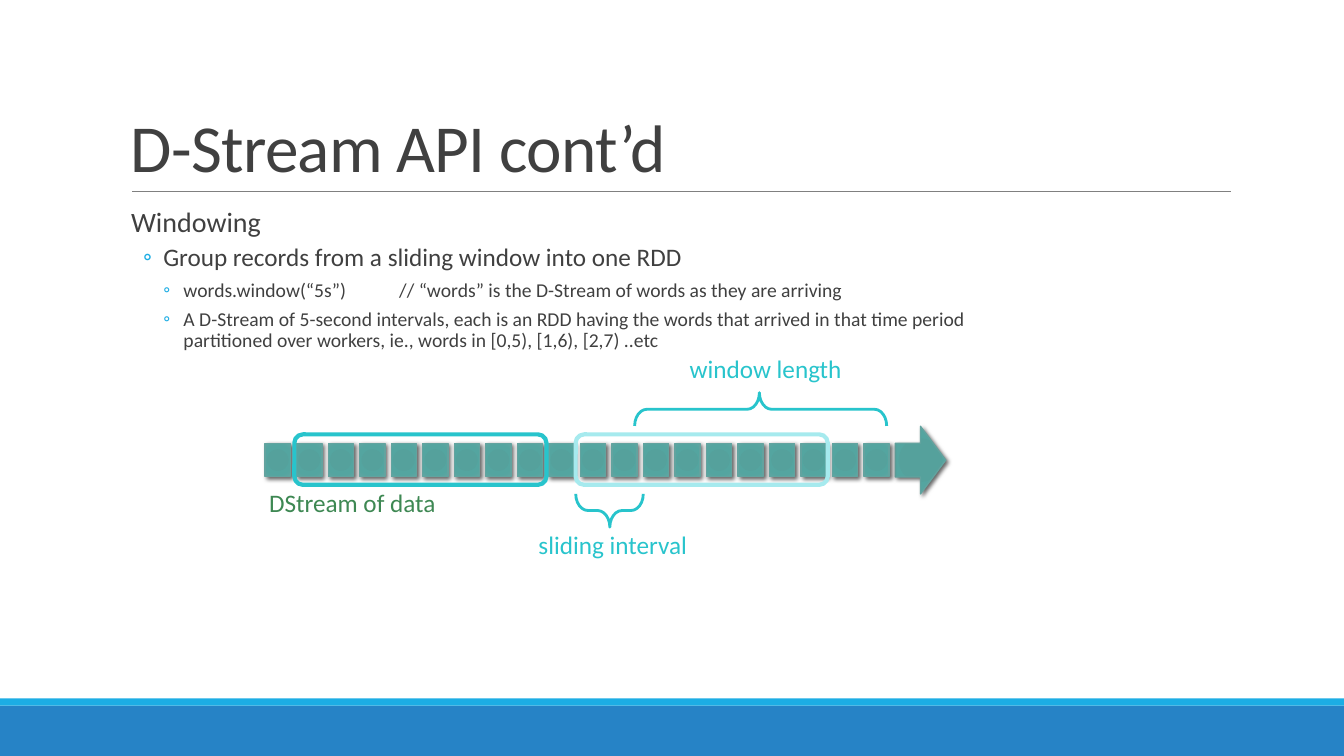
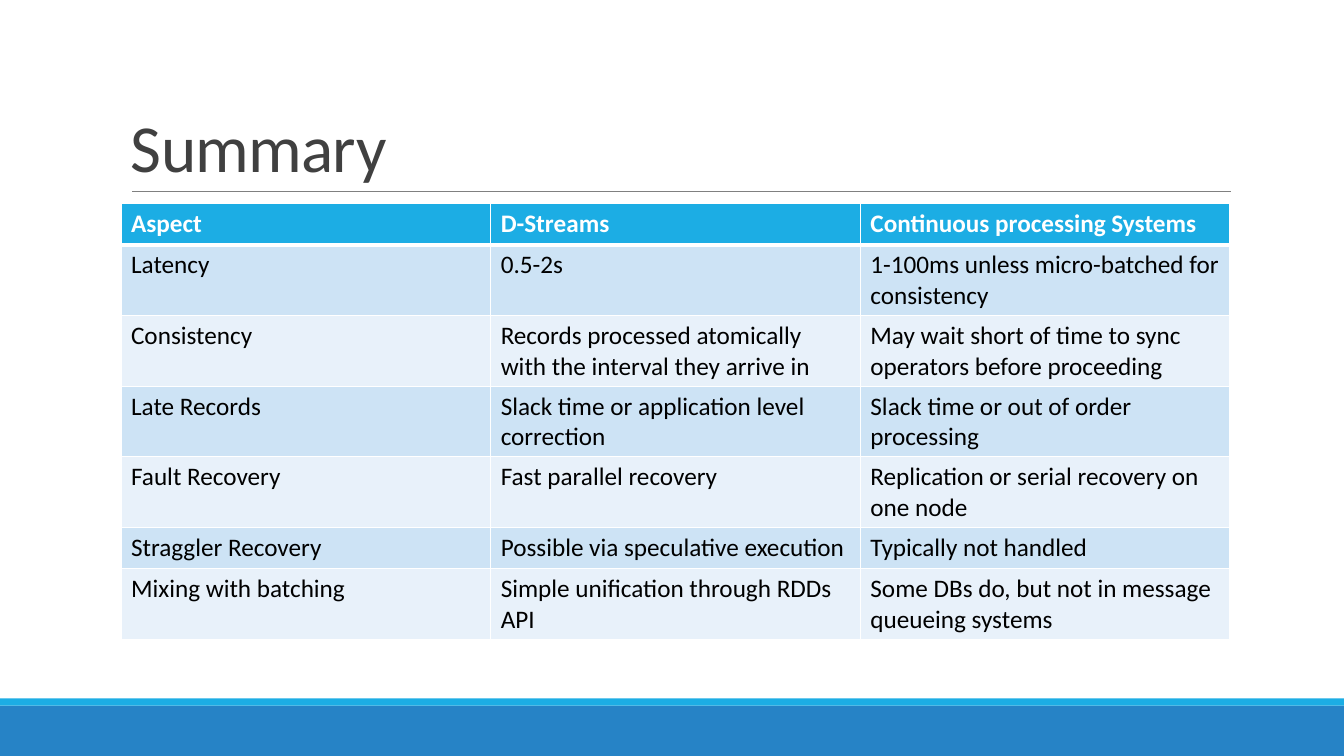
from dataclasses import dataclass
from typing import Any

from pptx import Presentation
from pptx.dml.color import RGBColor
from pptx.enum.shapes import MSO_CONNECTOR, MSO_SHAPE
from pptx.enum.text import MSO_ANCHOR
from pptx.oxml import parse_xml
from pptx.oxml.ns import nsdecls
from pptx.util import Inches, Pt

COLORS = {
    "white": "FFFFFF", "black": "000000", "text": "404040", "rule": "808080",
    "accent": "1CADE4", "band": "2683C6", "row_odd": "CDE3F5", "row_even": "E8F1FA",
    "teal": "28C4CC", "teal_light": "A6EAEE", "green": "3E8853", "block_line": "62A39F",
}
BLOCK_STOPS = ((0, "52A19C"), (34, "55A19C"), (70, "54A5A0"), (100, "5FA6A2"))
FONT = "Calibri"
SLIDE_W, SLIDE_H = 13.33, 7.5
CONTENT_X, CONTENT_Y, CONTENT_W = 1.2, 2.02, 11
STREAM_X, STREAM_Y, BLOCK_W, BLOCK_H, BLOCK_STEP, BLOCK_COUNT = 2.63, 4.4, 0.25, 0.33, 0.3126, 20


@dataclass(frozen=True)
class Box:
    x: float
    y: float
    w: float
    h: float

    def emu(self) -> tuple[int, ...]:
        return tuple(Inches(v) for v in (self.x, self.y, self.w, self.h))


@dataclass(frozen=True)
class Level:
    margin: float
    hanging: float
    size: int
    before: int
    after: int
    bullet: str = ""


@dataclass(frozen=True)
class BraceLabel:
    text: str
    label: Box
    brace: Box
    rotation: int


LEVELS = (
    Level(0.1, 0, 20, 12, 2),
    Level(0.42, 0.2, 18, 2, 4, "◦"),
    Level(0.62, 0.2, 14, 2, 4, "◦"),
)
BODY = (
    (0, "Windowing"),
    (1, "Group records from a sliding window into one RDD"),
    (2, "words.window(“5s”)\t// “words” is the D-Stream of words as they are arriving"),
    (2, "A D-Stream of 5-second intervals, each is an RDD having the words that arrived "
        "in that time period\vpartitioned over workers, ie., words in [0,5), [1,6), [2,7) ..etc"),
)
COMMENT_TAB = 2.76
WINDOW_LENGTH = BraceLabel("window length", Box(6.8, 3.48, 1.61, 0.35), Box(7.38, 2.81, 0.33, 2.5), 270)
SLIDING_INTERVAL = BraceLabel("sliding interval", Box(5.3, 5.23, 1.58, 0.35), Box(5.88, 4.73, 0.33, 0.67), 90)
SUMMARY = (
    ("Aspect", "D-Streams", "Continuous processing Systems"),
    ("Latency", "0.5-2s", "1-100ms unless micro-batched for consistency"),
    ("Consistency", "Records processed atomically with the interval they arrive in",
     "May wait short of time to sync operators before proceeding"),
    ("Late Records", "Slack time or application level correction", "Slack time or out of order processing"),
    ("Fault Recovery", "Fast parallel recovery", "Replication or serial recovery on one node"),
    ("Straggler Recovery", "Possible via speculative execution", "Typically not handled"),
    ("Mixing with batching", "Simple unification through RDDs API",
     "Some DBs do, but not in message queueing systems"),
)


def rgb(name: str) -> RGBColor:
    return RGBColor.from_string(COLORS[name])


def set_attrs(target: Any, values: dict[str, Any]) -> None:
    for name, value in values.items():
        setattr(target, name, value)


def style_font(p: Any, color: str, size: int, bold: bool = False) -> None:
    for r in p.runs:
        set_attrs(r.font, {"name": FONT, "size": Pt(size), "bold": bold})
        r.font.color.rgb = rgb(color)


def add_shape(shapes: Any, kind: MSO_SHAPE, box: Box, fill: str = "", line: str = "", width: float = 1) -> Any:
    sp = shapes.add_shape(kind, *box.emu())
    sp.shadow.inherit = False
    if fill:
        sp.fill.solid()
        sp.fill.fore_color.rgb = rgb(fill)
    else:
        sp.fill.background()
    if line:
        sp.line.color.rgb = rgb(line)
        sp.line.width = Pt(width)
    else:
        sp.line.fill.background()
    return sp


def add_frame(slide: Any, title: str) -> None:
    """Draw the bottom bands, the title and the rule under it."""
    shapes = slide.shapes
    add_shape(shapes, MSO_SHAPE.RECTANGLE, Box(0, 7, SLIDE_W, 0.5), "band")
    add_shape(shapes, MSO_SHAPE.RECTANGLE, Box(0, 6.93, SLIDE_W, 0.07), "accent")
    rule = shapes.add_connector(MSO_CONNECTOR.STRAIGHT, Inches(1.31), Inches(1.9), Inches(12.21), Inches(1.9))
    rule.line.color.rgb = rgb("rule")
    rule.line.width = Pt(0.5)
    rule._element.spPr.append(parse_xml(f"<a:effectLst {nsdecls('a')}/>"))
    tf = shapes.add_textbox(*Box(CONTENT_X, 0.31, CONTENT_W, 1.59).emu()).text_frame
    set_attrs(tf, {"word_wrap": True, "vertical_anchor": MSO_ANCHOR.BOTTOM})
    p = tf.paragraphs[0]
    p.text = title
    p.line_spacing = 0.85
    style_font(p, "text", 48)
    p.runs[0].font._element.set("spc", "-50")


def add_body(slide: Any) -> None:
    tf = slide.shapes.add_textbox(*Box(CONTENT_X, CONTENT_Y, CONTENT_W, 4.4).emu()).text_frame
    set_attrs(tf, {"word_wrap": True, "margin_left": 0, "margin_right": 0})
    for i, (depth, text) in enumerate(BODY):
        level = LEVELS[depth]
        p = tf.add_paragraph() if i else tf.paragraphs[0]
        p.text = text
        set_attrs(p, {"level": depth, "line_spacing": 0.9,
                      "space_before": Pt(level.before), "space_after": Pt(level.after)})
        style_font(p, "text", level.size)
        pPr = p._p.get_or_add_pPr()
        pPr.set("marL", str(Inches(level.margin)))
        pPr.set("indent", str(-Inches(level.hanging)))
        if level.bullet:
            pPr.append(parse_xml(f'<a:buClr {nsdecls("a")}><a:srgbClr val="{COLORS["accent"]}"/></a:buClr>'))
            pPr.append(parse_xml(f'<a:buFont {nsdecls("a")} typeface="{FONT}"/>'))
            pPr.append(parse_xml(f'<a:buChar {nsdecls("a")} char="{level.bullet}"/>'))
        if "\t" in text:
            pPr.append(parse_xml(f'<a:tabLst {nsdecls("a")}><a:tab pos="{Inches(COMMENT_TAB)}" algn="l"/></a:tabLst>'))


def add_label(shapes: Any, text: str, box: Box, color: str) -> None:
    tf = shapes.add_textbox(*box.emu()).text_frame
    set_attrs(tf, {"word_wrap": False, "margin_left": Inches(0.04), "margin_right": Inches(0.04),
                   "margin_top": Inches(0.02), "margin_bottom": Inches(0.02)})
    p = tf.paragraphs[0]
    p.text = text
    style_font(p, color, 18)


def add_block(shapes: Any, kind: MSO_SHAPE, box: Box) -> None:
    """Add a stream part with a radial gradient and a soft shadow."""
    sp = add_shape(shapes, kind, box, line="block_line")
    spPr = sp._element.spPr
    stops = "".join(f'<a:gs pos="{pos * 1000}"><a:srgbClr val="{color}"/></a:gs>' for pos, color in BLOCK_STOPS)
    spPr.replace(spPr.find("{*}noFill"), parse_xml(
        f'<a:gradFill {nsdecls("a")}><a:gsLst>{stops}</a:gsLst><a:path path="circle">'
        '<a:fillToRect l="100000" t="100000" r="100000" b="100000"/></a:path></a:gradFill>'))
    spPr.find("{*}effectLst").append(parse_xml(
        f'<a:outerShdw {nsdecls("a")} blurRad="{Pt(3)}" dist="{Pt(2)}" dir="{45 * 60000}">'
        f'<a:srgbClr val="{COLORS["black"]}"><a:alpha val="60000"/></a:srgbClr></a:outerShdw>'))


def add_stream(slide: Any) -> None:
    shapes = slide.shapes.add_group_shape().shapes
    add_block(shapes, MSO_SHAPE.RIGHT_ARROW, Box(8.88, 4.23, 0.5, 0.67))
    for i in range(BLOCK_COUNT):
        add_block(shapes, MSO_SHAPE.RECTANGLE, Box(STREAM_X + i * BLOCK_STEP, STREAM_Y, BLOCK_W, BLOCK_H))
    add_label(shapes, "DStream of data", Box(STREAM_X, 4.81, 1.76, 0.35), "green")


def add_window(slide: Any, x: float, color: str) -> None:
    add_shape(slide.shapes, MSO_SHAPE.ROUNDED_RECTANGLE, Box(x, 4.31, 2.5, 0.5), line=color, width=3)


def add_brace(slide: Any, item: BraceLabel) -> None:
    shapes = slide.shapes.add_group_shape().shapes
    add_label(shapes, item.text, item.label, "teal")
    sp = add_shape(shapes, MSO_SHAPE.RIGHT_BRACE, item.brace, line="teal", width=2)
    sp.rotation = item.rotation
    for i, value in enumerate((0.368, 0.495)):
        sp.adjustments[i] = value


def add_borders(cell: Any, widths: dict[str, int]) -> None:
    tcPr = cell._tc.get_or_add_tcPr()
    for side, width in widths.items():
        tcPr.append(parse_xml(
            f'<a:ln{side} {nsdecls("a")} w="{Pt(width)}"><a:solidFill>'
            f'<a:srgbClr val="{COLORS["white"]}"/></a:solidFill></a:ln{side}>'))


def add_summary_table(slide: Any) -> None:
    row_h = 0.41
    box = Box(CONTENT_X, CONTENT_Y, CONTENT_W, row_h * len(SUMMARY))
    table = slide.shapes.add_table(len(SUMMARY), len(SUMMARY[0]), *box.emu()).table
    table.horz_banding = False
    for i, texts in enumerate(SUMMARY):
        header = i == 0
        fill = "accent" if header else "row_odd" if i % 2 else "row_even"
        for j, text in enumerate(texts):
            cell = table.cell(i, j)
            add_borders(cell, {"L": 1, "R": 1, "T": 3 if i == 1 else 1, "B": 3 if header else 1})
            cell.fill.solid()
            cell.fill.fore_color.rgb = rgb(fill)
            cell.text = text
            style_font(cell.text_frame.paragraphs[0], "white" if header else "black", 18, header)


def main() -> None:
    prs = Presentation()
    prs.slide_width, prs.slide_height = Inches(SLIDE_W), Inches(SLIDE_H)
    blank = prs.slide_layouts[6]

    s = prs.slides.add_slide(blank)
    add_frame(s, "D-Stream API cont’d")
    add_body(s)
    add_stream(s)
    add_window(s, 5.71, "teal_light")
    add_brace(s, WINDOW_LENGTH)
    add_brace(s, SLIDING_INTERVAL)
    add_window(s, 2.92, "teal")

    s = prs.slides.add_slide(blank)
    add_frame(s, "Summary")
    add_summary_table(s)

    prs.save("out.pptx")


if __name__ == "__main__":
    main()
